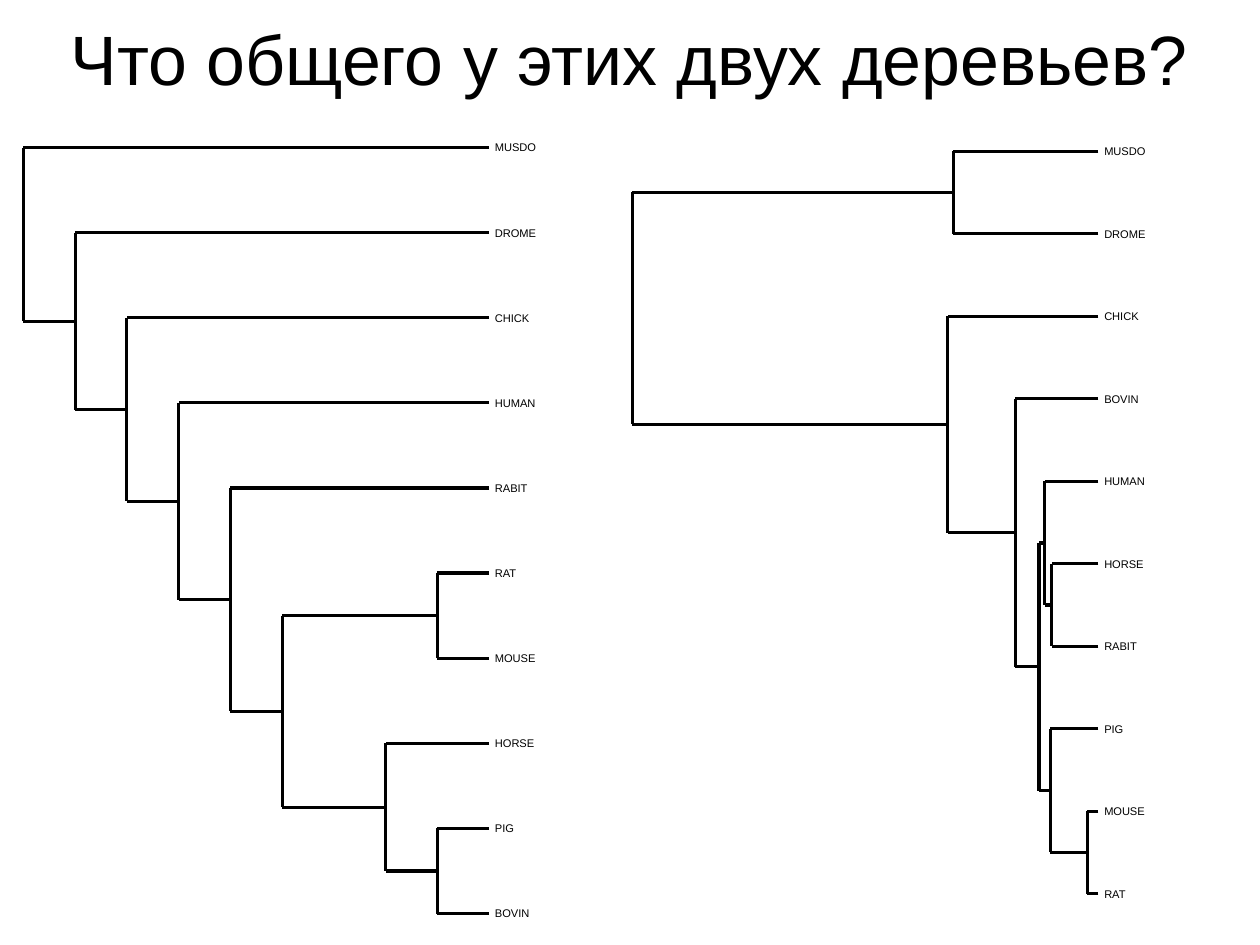
from dataclasses import dataclass

from lxml.etree import SubElement
from pptx import Presentation
from pptx.dml.color import RGBColor
from pptx.enum.shapes import MSO_CONNECTOR
from pptx.enum.text import MSO_ANCHOR, MSO_AUTO_SIZE, PP_ALIGN
from pptx.oxml.ns import qn
from pptx.util import Cm, Pt


@dataclass(frozen=True)
class Theme:
    ink: RGBColor = RGBColor(0, 0, 0)
    paper: RGBColor = RGBColor(255, 255, 255)
    font: str = "Arial"
    title_size: float = 44
    label_size: float = 7
    line_width: float = 0


THEME = Theme()
LABEL_GAP, LABEL_W, LABEL_H = 0.13, 1, 0.3
STEP = 1.15

CLADOGRAM = (9 * STEP, "MUSDO",
             (8 * STEP, "DROME",
              (7 * STEP, "CHICK",
               (6 * STEP, "HUMAN",
                (5 * STEP, "RABIT",
                 (4 * STEP,
                  (STEP, "RAT", "MOUSE"),
                  (2 * STEP, "HORSE", (STEP, "PIG", "BOVIN"))))))))

PHYLOGRAM = (10.36,
             (3.23, "MUSDO", "DROME"),
             (3.35, "CHICK",
              (1.85, "BOVIN",
               (1.32,
                (1.19, "HUMAN", (1.04, "HORSE", "RABIT")),
                (1.07, "PIG", (0.25, "MOUSE", "RAT"))))))


def set_all(target, values):
    for name, value in values.items():
        setattr(target, name, value)


def write(sp, text, size, frame, paragraph):
    tf = sp.text_frame
    set_all(tf, frame)
    p = tf.paragraphs[0]
    set_all(p, paragraph)
    r = p.add_run()
    r.text = text
    set_all(r.font, {"name": THEME.font, "size": Pt(size)})
    r.font.color.rgb = THEME.ink


def add_title(s, text, left, top, width, height):
    sp = s.shapes.title
    set_all(sp, {"left": Cm(left), "top": Cm(top),
                 "width": Cm(width), "height": Cm(height)})
    write(sp, text, THEME.title_size,
          {"margin_left": 0, "margin_right": 0, "margin_top": Cm(0.1),
           "margin_bottom": 0, "vertical_anchor": MSO_ANCHOR.MIDDLE,
           "auto_size": MSO_AUTO_SIZE.NONE, "word_wrap": True},
          {"alignment": PP_ALIGN.CENTER, "line_spacing": 0.93})


def add_branch(s, x1, y1, x2, y2):
    line = s.shapes.add_connector(
        MSO_CONNECTOR.STRAIGHT, Cm(x1), Cm(y1), Cm(x2), Cm(y2))
    line.line.color.rgb = THEME.ink
    line.line.width = Pt(THEME.line_width)
    SubElement(line._element.spPr, qn("a:effectLst"))


def add_species(s, name, x, y):
    sp = s.shapes.add_textbox(Cm(x + LABEL_GAP), Cm(y - LABEL_H / 2),
                              Cm(LABEL_W), Cm(LABEL_H))
    write(sp, name, THEME.label_size,
          {"margin_left": 0, "margin_right": 0, "margin_top": 0,
           "margin_bottom": 0, "word_wrap": True},
          {"alignment": PP_ALIGN.LEFT})


def count_leaves(node):
    return 1 if isinstance(node, str) else sum(map(count_leaves, node[1:]))


def add_tree(s, tree, left, top, width, height):
    tip = left + width
    gap = height / (count_leaves(tree) - 1)

    def place(node, row):
        if isinstance(node, str):
            y = top + row * gap
            add_species(s, node, tip, y)
            return tip, y
        x = tip - node[0]
        ys = []
        for child in node[1:]:
            child_x, y = place(child, row)
            add_branch(s, child_x, y, x, y)
            ys.append(y)
            row += count_leaves(child)
        add_branch(s, x, ys[0], x, ys[-1])
        return x, (ys[0] + ys[-1]) / 2

    place(tree, 0)


def main():
    prs = Presentation()
    set_all(prs, {"slide_width": Cm(28), "slide_height": Cm(21)})
    s = prs.slides.add_slide(prs.slide_layouts[5])
    s.background.fill.solid()
    s.background.fill.fore_color.rgb = THEME.paper
    add_tree(s, CLADOGRAM, 0.52, 3.28, 10.35, 17.02)
    add_tree(s, PHYLOGRAM, 14.05, 3.36, 10.36, 16.5)
    add_title(s, "Что общего у этих двух деревьев?", 1.4, -0.41, 25.2, 3.5)
    prs.save("out.pptx")


if __name__ == "__main__":
    main()
